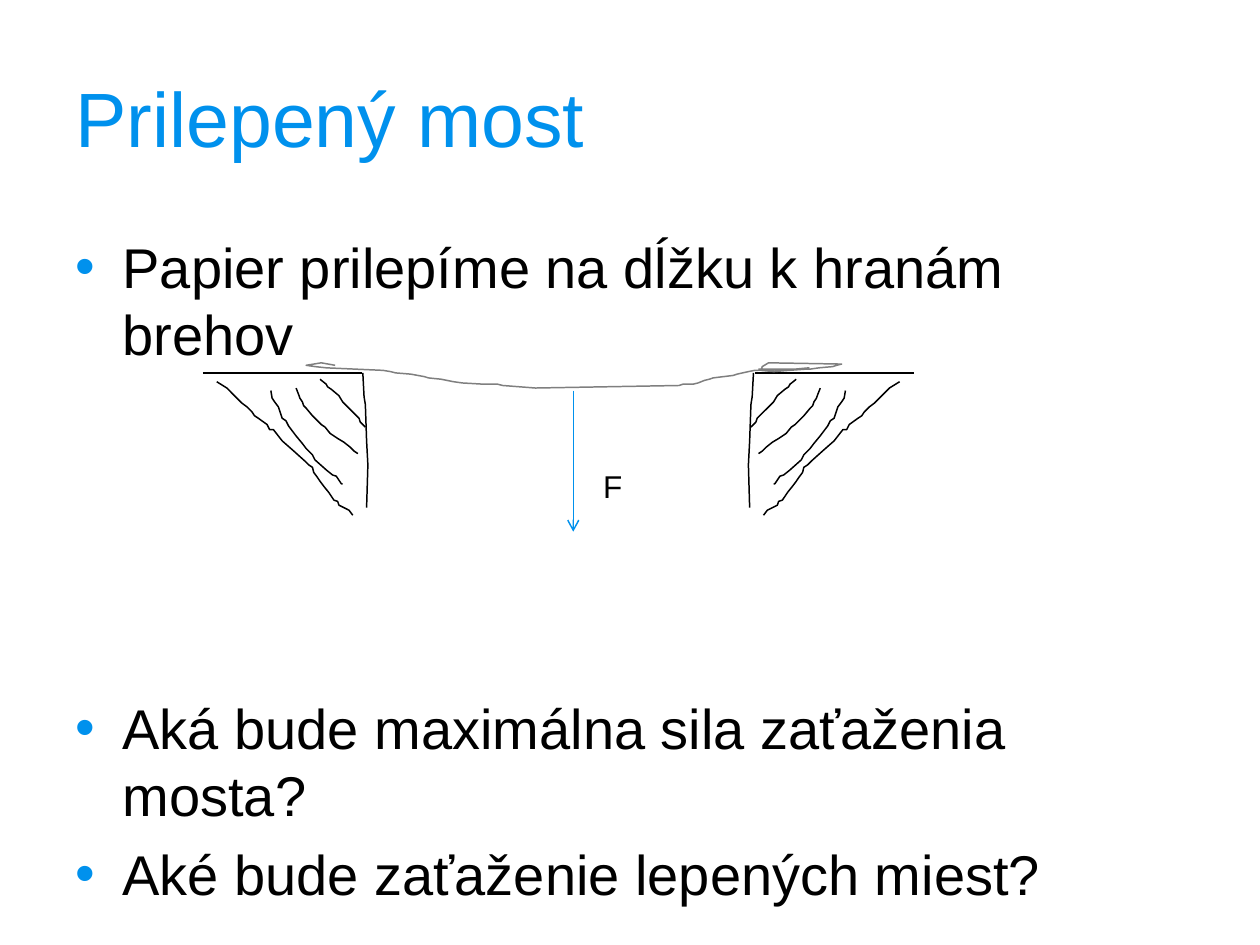
"""Builds the slide on a paper bridge glued to two hatched banks."""
from dataclasses import dataclass

from lxml.etree import SubElement
from pptx import Presentation
from pptx.dml.color import RGBColor as RGB
from pptx.enum.shapes import MSO_CONNECTOR as CONN
from pptx.enum.text import MSO_ANCHOR as ANCHOR
from pptx.oxml.ns import qn
from pptx.util import Pt


@dataclass(frozen=True)
class Theme:
    font: str = "Arial"
    accent: str = "0091ED"
    ink: str = "000000"
    paper: str = "7F7F7F"
    title: float = 44
    body: float = 32
    label: float = 18
    stroke: float = 0.85
    grid: float = 0.72


@dataclass(frozen=True)
class TextBox:
    box: tuple
    paragraphs: tuple
    size: float
    color: str
    frame: dict
    bullet: str = ""


@dataclass(frozen=True)
class Stroke:
    points: tuple
    color: str


T = Theme()
MIRROR_SUM = 886

TITLE = TextBox((36, 21.6, 648, 90), (("Prilepený most", 0),), T.title, T.accent,
                {"word_wrap": True, "vertical_anchor": ANCHOR.MIDDLE})
BODY = TextBox((36, 126, 648, 382.5),
               (("Papier prilepíme na dĺžku k hranám brehov", 0),
                ("Aká bude maximálna sila zaťaženia mosta?", 187),
                ("Aké bude zaťaženie lepených miest?", 6.4)),
               T.body, T.ink, {"word_wrap": True, "margin_top": Pt(6.6)}, "•")
FORCE = TextBox((337.5, 263.5, 23, 29), (("F", 0),), T.label, T.ink,
                {"word_wrap": False})

BANK_TOP = ((161, 296), (287, 296))
BANK_STROKES = (
    ((288, 296), (289, 315), (290, 321), (291, 350), (292, 369), (291, 403)),
    ((254, 301), (259, 305), (260, 307), (263, 309), (269, 314), (272, 319),
     (277, 324), (280, 327), (285, 332), (286, 335), (290, 339)),
    ((235, 308), (237, 313), (238, 316), (240, 319), (241, 322), (243, 324),
     (248, 330), (250, 332), (255, 337), (258, 339), (262, 344), (268, 348),
     (273, 351), (278, 355), (281, 358), (284, 360)),
    ((215, 310), (216, 316), (218, 319), (221, 323), (224, 332), (227, 334),
     (229, 338), (235, 346), (240, 352), (243, 356), (248, 361), (250, 365),
     (259, 373), (264, 377), (267, 378), (271, 384), (272, 384)),
    ((172, 303), (180, 308), (186, 314), (192, 320), (196, 323), (200, 327),
     (202, 330), (205, 332), (212, 337), (214, 341), (217, 341), (224, 350),
     (232, 357), (242, 366), (245, 369), (248, 371), (249, 375), (252, 379),
     (254, 382), (257, 386), (261, 391), (265, 397), (268, 398), (269, 401),
     (277, 405), (280, 409)),
)
PAPER = Stroke((
    (266, 290), (255, 288.5), (243, 290), (250, 291), (259, 292), (304, 294),
    (310, 295), (314, 296), (326, 297), (337, 299), (340, 300), (350, 301),
    (360, 303), (367, 304), (384, 305), (395, 305), (399, 306), (425, 308),
    (539, 306), (542, 305), (550, 305), (554, 304), (559, 302), (563, 301),
    (566, 300), (582, 298), (585, 297), (594, 295), (599, 294), (631, 293),
    (642, 292), (640, 293), (626, 294), (614, 295), (604, 294), (605, 291),
    (610, 288), (668, 289), (664, 290), (661, 291), (650, 292), (643, 293),
    (602, 293)), T.paper)
FORCE_ARROW = Stroke(((455, 310), (455, 422)), T.accent)


def add_text(s, item: TextBox) -> None:
    tf = s.shapes.add_textbox(*map(Pt, item.box)).text_frame
    for name, value in item.frame.items():
        setattr(tf, name, value)
    for i, (text, before) in enumerate(item.paragraphs):
        p = tf.paragraphs[0] if i == 0 else tf.add_paragraph()
        if before:
            p.space_before = Pt(before)
        if item.bullet:
            add_bullet(p, item.bullet)
        r = p.add_run()
        r.text = text
        for name, value in {"name": T.font, "size": Pt(item.size)}.items():
            setattr(r.font, name, value)
        r.font.color.rgb = RGB.from_string(item.color)


def add_bullet(p, char: str) -> None:
    pPr = p._p.get_or_add_pPr()
    pPr.set("marL", str(Pt(27)))
    pPr.set("indent", str(-Pt(27)))
    color = SubElement(pPr, qn("a:buClr"))
    SubElement(color, qn("a:srgbClr"), val=T.accent)
    SubElement(pPr, qn("a:buFont"), typeface=T.font)
    SubElement(pPr, qn("a:buChar"), char=char)


def set_line(line, color: str) -> None:
    line.color.rgb = RGB.from_string(color)
    line.width = Pt(T.stroke)


def add_line(s, stroke: Stroke, arrow: bool = False) -> None:
    ends = (Pt(v * T.grid) for point in stroke.points for v in point)
    sp = s.shapes.add_connector(CONN.STRAIGHT, *ends)
    set_line(sp.line, stroke.color)
    if arrow:
        SubElement(sp.line._get_or_add_ln(), qn("a:tailEnd"), type="arrow")
    SubElement(sp._element.spPr, qn("a:effectLst"))


def add_sketch(s, stroke: Stroke) -> None:
    start, *rest = stroke.points
    builder = s.shapes.build_freeform(*start, scale=Pt(T.grid))
    builder.add_line_segments(rest, close=False)
    sp = builder.convert_to_shape()
    sp.shadow.inherit = False
    sp.fill.background()
    set_line(sp.line, stroke.color)


def mirror(points: tuple) -> tuple:
    return tuple((MIRROR_SUM - x, y) for x, y in points)


def add_bank(s, mirrored: bool) -> None:
    place = mirror if mirrored else tuple
    add_line(s, Stroke(place(BANK_TOP), T.ink))
    for points in BANK_STROKES:
        add_sketch(s, Stroke(place(points), T.ink))


def main() -> None:
    prs = Presentation()
    prs.slide_width, prs.slide_height = Pt(720), Pt(540)
    s = prs.slides.add_slide(prs.slide_layouts[6])
    add_text(s, TITLE)
    add_text(s, BODY)
    for mirrored in (False, True):
        add_bank(s, mirrored)
    add_sketch(s, PAPER)
    add_line(s, FORCE_ARROW, arrow=True)
    add_text(s, FORCE)
    prs.save("out.pptx")


if __name__ == "__main__":
    main()
